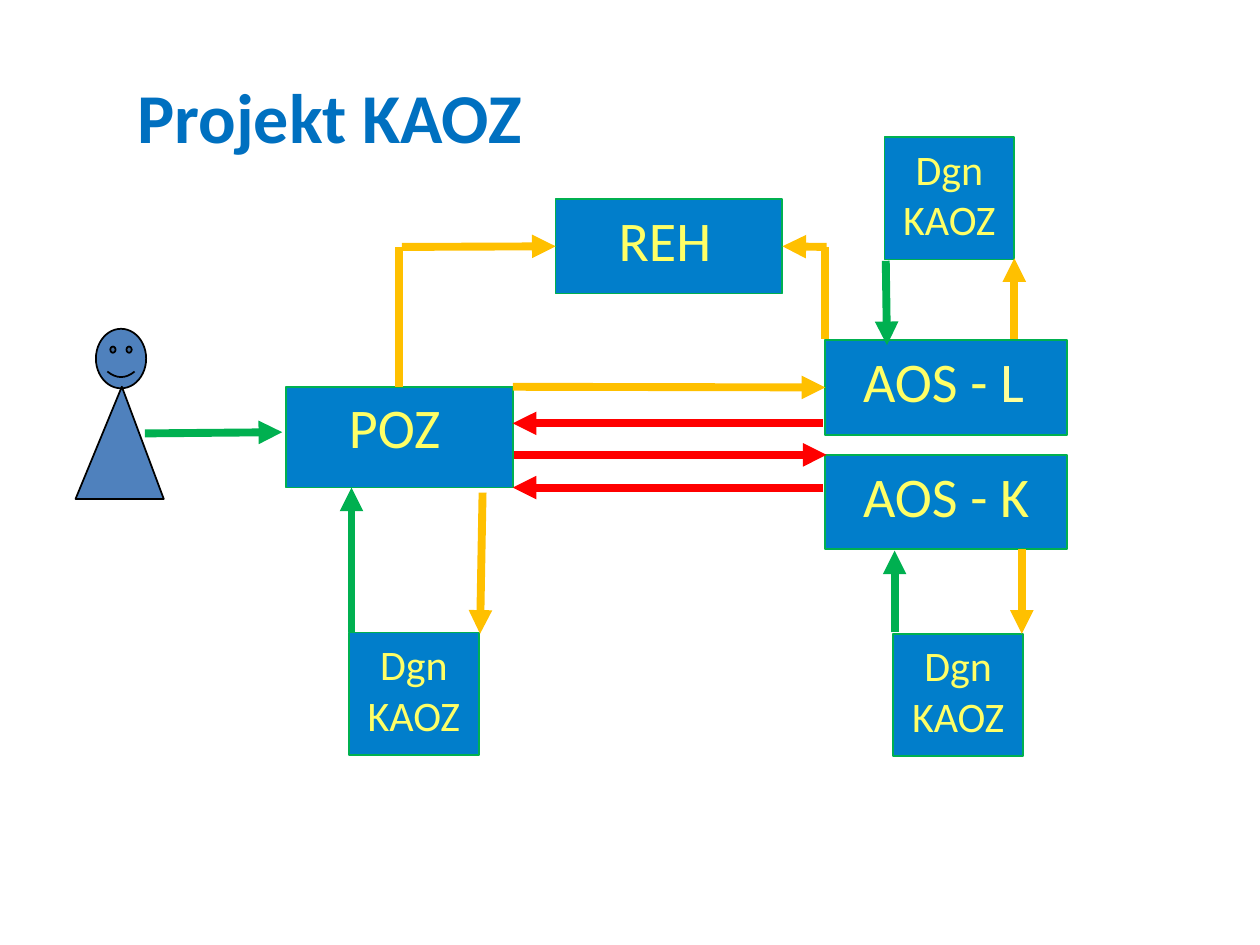
import dataclasses

import lxml.etree
import pptx
import pptx.dml.color
import pptx.enum.shapes
import pptx.enum.text
import pptx.oxml.ns
import pptx.util

SHAPES = pptx.enum.shapes.MSO_SHAPE
ALIGN = pptx.enum.text.PP_ALIGN
TOP, LEFT, BOTTOM, RIGHT = range(4)
COLUMNS, ROWS = 100, 75


@dataclasses.dataclass(frozen=True)
class Theme:
    font: str = "Calibri"
    title: str = "0070C0"
    unit: str = "017ECB"
    label: str = "FFFF66"
    pale_label: str = "FFFF99"
    person: str = "4F81BD"
    outline: str = "000000"
    green: str = "00B050"
    amber: str = "FFC000"
    red: str = "FF0000"
    title_size: int = 40
    unit_size: int = 32
    diagnosis_size: int = 24
    border: float = 1
    arrow: float = 4.5


THEME = Theme()


@dataclasses.dataclass(frozen=True)
class Box:
    left: int
    top: int
    width: int
    height: int

    def point(self, col, row, columns=COLUMNS, rows=ROWS):
        return (self.left + round(self.width * col / columns),
                self.top + round(self.height * row / rows))

    def area(self, col, row, wide, high, columns=COLUMNS, rows=ROWS):
        return Box(*self.point(col, row, columns, rows),
                   round(self.width * wide / columns),
                   round(self.height * high / rows))

    def bounds(self):
        return self.left, self.top, self.width, self.height


def rgb(value):
    return pptx.dml.color.RGBColor.from_string(value)


def add_span(para, text, size, color, bold=False):
    span = para.add_run()
    span.text = text
    span.font.name = THEME.font
    span.font.size = pptx.util.Pt(size)
    span.font.color.rgb = rgb(color)
    span.font.bold = bold


def add_filled(page, kind, box, fill, outline):
    shape = page.shapes.add_shape(kind, *box.bounds())
    shape.shadow.inherit = False
    shape.fill.solid()
    shape.fill.fore_color.rgb = rgb(fill)
    shape.line.color.rgb = rgb(outline)
    shape.line.width = pptx.util.Pt(THEME.border)
    return shape


def add_unit(page, box, spans, size, align, indent=0.1):
    shape = add_filled(page, SHAPES.RECTANGLE, box, THEME.unit, THEME.green)
    frame = shape.text_frame
    frame.word_wrap = True
    frame.vertical_anchor = pptx.enum.text.MSO_ANCHOR.TOP
    frame.margin_left = pptx.util.Inches(indent)
    para = frame.paragraphs[0]
    para.alignment = align
    for text, color in spans:
        add_span(para, text, size, color)
    return shape


def add_link(page, box, color, start, end, arrow=True):
    """Each end is a (column, row) pair or a (shape, side) pair to join."""
    joined = [not isinstance(stop[0], (int, float)) for stop in (start, end)]
    begin, finish = [box.point(0, 0) if join else box.point(*stop)
                     for join, stop in zip(joined, (start, end))]
    link = page.shapes.add_connector(
        pptx.enum.shapes.MSO_CONNECTOR.STRAIGHT, *begin, *finish)
    if joined[0]:
        link.begin_connect(*start)
    if joined[1]:
        link.end_connect(*end)
    link.line.color.rgb = rgb(color)
    link.line.width = pptx.util.Pt(THEME.arrow)
    qn = pptx.oxml.ns.qn
    properties = link.element.spPr
    if arrow:
        lxml.etree.SubElement(properties.find(qn("a:ln")), qn("a:tailEnd"), type="triangle")
    lxml.etree.SubElement(properties, qn("a:effectLst"))


def fill_title(page, box):
    title = page.shapes.title
    title.left, title.top, title.width, title.height = box.bounds()
    frame = title.text_frame
    frame.word_wrap = True
    frame.vertical_anchor = pptx.enum.text.MSO_ANCHOR.TOP
    frame.margin_left = pptx.util.Inches(0.23)
    para = frame.paragraphs[0]
    para.alignment = ALIGN.LEFT
    add_span(para, "Projekt KAOZ", THEME.title_size, THEME.title, bold=True)


def add_person(page, box):
    # Head, then body
    for kind, share in ((SHAPES.SMILEY_FACE, (23, 0, 57, 35)),
                        (SHAPES.ISOSCELES_TRIANGLE, (0, 34, 100, 66))):
        shape = add_filled(page, kind, box.area(*share, columns=100, rows=100),
                           THEME.person, THEME.outline)
    shape.adjustments[0] = 0.525


def add_diagram(page, box):
    # Care units
    units = {}
    for name, place, indent in (
            ("POZ", (22.7, 30.7, 18, 8), 0.5),
            ("REH", (44.1, 15.8, 18, 7.5), 0.5),
            ("AOS - L", (65.5, 27, 19.2, 7.5), 0.3),
            ("AOS - K", (65.5, 36.1, 19.2, 7.5), 0.3)):
        spans = [(name, THEME.label)]
        if name == "AOS - L":
            spans = [("AOS - ", THEME.label), ("L", THEME.pale_label)]
        units[name] = add_unit(page, box.area(*place), spans,
                               THEME.unit_size, ALIGN.LEFT, indent)

    # Diagnosis boxes
    for col, row in ((27.7, 50.2), (70.9, 50.3), (70.2, 10.9)):
        add_unit(page, box.area(col, row, 10.3, 9.7),
                 [("Dgn KAOZ", THEME.label)], THEME.diagnosis_size, ALIGN.CENTER)

    # Entry of the patient and incoming diagnoses
    for start, end in (((11.5, 34.4), (22.4, 34.3)),
                       ((27.9, 50.2), (27.9, 38.7)),
                       ((71, 50.2), (71, 43.7)),
                       ((70.3, 20.7), (70.4, 27.4))):
        add_link(page, box, THEME.green, start, end)

    # Referrals
    poz, reh, aos = units["POZ"], units["REH"], units["AOS - L"]
    for start, end, arrow in (
            ((31.7, 19.6), (poz, TOP), False),
            ((31.9, 19.6), (reh, LEFT), True),
            ((65.5, 19.6), (65.5, 26.9), False),
            ((65.6, 19.6), (reh, RIGHT), True),
            ((40.7, 30.7), (aos, LEFT), True),
            ((38.3, 39.1), (38.1, 50.3), True),
            ((81.1, 43.6), (81.1, 50.3), True),
            ((80.5, 26.9), (80.5, 20.5), True)):
        add_link(page, box, THEME.amber, start, end, arrow)

    # Exchange between POZ and the AOS units
    for start, end in (((65.3, 33.6), (40.7, 33.6)),
                       ((40.8, 36.1), (65.6, 36.1)),
                       ((65.3, 38.7), (40.7, 38.7))):
        add_link(page, box, THEME.red, start, end)


def main():
    deck = pptx.Presentation()
    deck.slide_width = pptx.util.Inches(10)
    deck.slide_height = pptx.util.Inches(7.5)
    page = deck.slides.add_slide(deck.slide_layouts[5])
    whole = Box(0, 0, deck.slide_width, deck.slide_height)
    fill_title(page, whole.area(8.6, 5.3, 43, 7.7))
    add_person(page, whole.area(6, 26.1, 7, 13.5))
    add_diagram(page, whole)
    deck.save("out.pptx")


if __name__ == "__main__":
    main()
